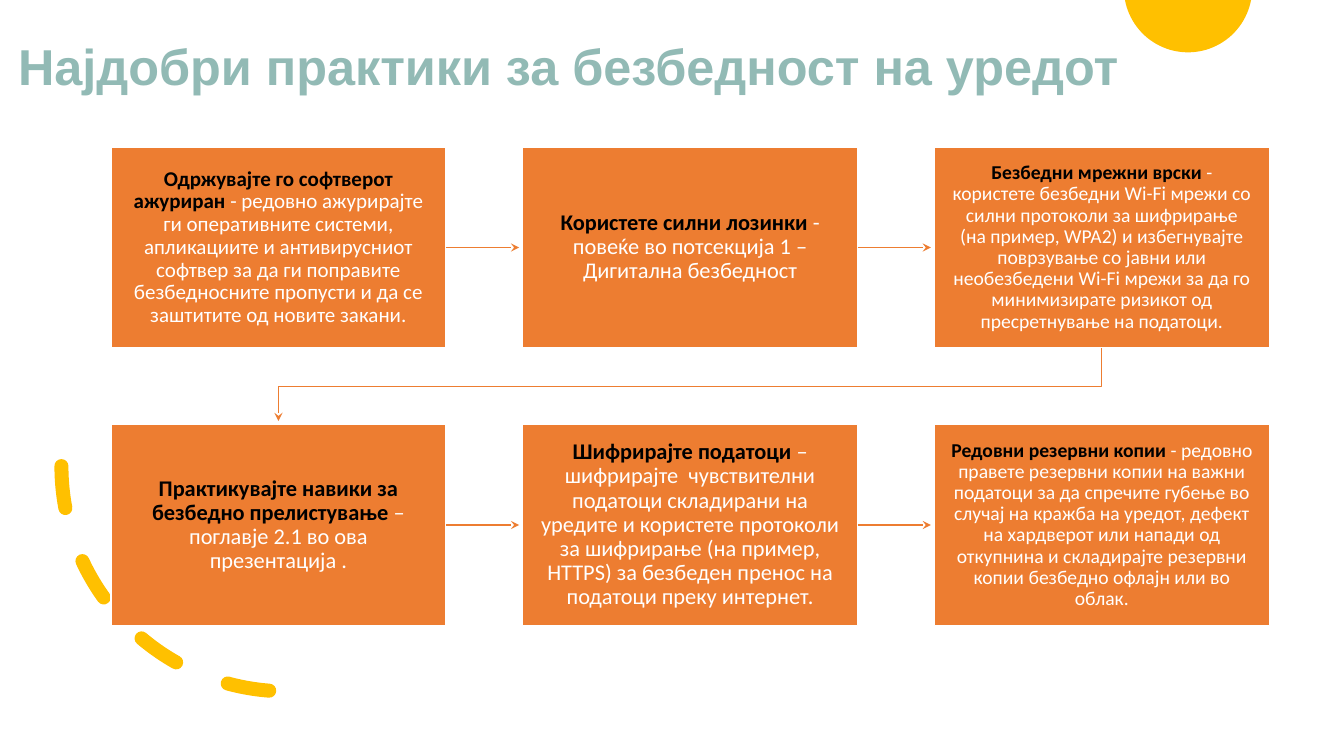
import math
from dataclasses import dataclass

from lxml import etree
from pptx import Presentation
from pptx.dml.color import RGBColor
from pptx.enum.dml import MSO_LINE
from pptx.enum.shapes import MSO_CONNECTOR, MSO_SHAPE
from pptx.enum.text import MSO_ANCHOR, PP_ALIGN
from pptx.oxml.ns import qn
from pptx.util import Pt

RECT, ARC = MSO_SHAPE.RECTANGLE, MSO_SHAPE.ARC
STRAIGHT = MSO_CONNECTOR.STRAIGHT
DASH = MSO_LINE.DASH
MIDDLE = MSO_ANCHOR.MIDDLE
CENTER = PP_ALIGN.CENTER
BOTTOM_SIDE, RIGHT_SIDE = 2, 3


@dataclass(frozen=True)
class Theme:
    title: RGBColor = RGBColor.from_string("92BAB5")
    box: RGBColor = RGBColor.from_string("ED7D31")
    accent: RGBColor = RGBColor.from_string("FFC000")
    strong: RGBColor = RGBColor.from_string("000000")
    light: RGBColor = RGBColor.from_string("FFFFFF")
    title_font: str = "Arial"
    body_font: str = "Calibri"
    title_size: int = 36
    large: int = 16
    medium: int = 15
    small: int = 14


THEME = Theme()

LEFT, TOP = 79.3, 105.1
BOX_W, BOX_H = 239.2, 143.4
PITCH_X, PITCH_Y = 294.1, 198.2
COLUMNS = 3
ARROW_GAP = 2.6

PRACTICES = [
    ("Одржувајте го софтверот ажуриран ",
     "- редовно ажурирајте ги оперативните системи, апликациите и антивирусниот "
     "софтвер за да ги поправите безбедносните пропусти и да се заштитите од "
     "новите закани.", THEME.medium),
    ("Користете силни лозинки ",
     "- повеќе во потсекција 1 – Дигитална безбедност", THEME.large),
    ("Безбедни мрежни врски ",
     "- користете безбедни Wi-Fi мрежи со силни протоколи за шифрирање (на "
     "пример, WPA2) и избегнувајте поврзување со јавни или необезбедени Wi-Fi "
     "мрежи за да го минимизирате ризикот од пресретнување на податоци.",
     THEME.small),
    ("Практикувајте навики за безбедно прелистување ",
     "– поглавје 2.1 во ова презентација .", THEME.large),
    ("Шифрирајте податоци ",
     "– шифрирајте  чувствителни податоци складирани на уредите и користете "
     "протоколи за шифрирање (на пример, HTTPS) за безбеден пренос на податоци "
     "преку интернет.", THEME.large),
    ("Редовни резервни копии ",
     "- редовно правете резервни копии на важни податоци за да спречите губење "
     "во случај на кражба на уредот, дефект на хардверот или напади од "
     "откупнина и складирајте резервни копии безбедно офлајн или во облак.",
     THEME.small),
]


def add_outline(slide, points, close):
    corners = [(Pt(x), Pt(y)) for x, y in points]
    builder = slide.shapes.build_freeform(*corners[0])
    builder.add_line_segments(corners[1:], close=close)
    s = builder.convert_to_shape()
    s.shadow.inherit = False
    return s


def style_arrow(s):
    s.line.color.rgb = THEME.box
    s.line.width = Pt(0.75)
    ln = s._element.spPr.get_or_add_ln()
    etree.SubElement(ln, qn("a:tailEnd"), type="stealth")


def add_title(slide, text):
    s = slide.shapes.add_textbox(Pt(5.8), Pt(18.7), Pt(828.7), Pt(61.2))
    tf = s.text_frame
    tf.word_wrap = True
    tf.vertical_anchor = MIDDLE
    p = tf.paragraphs[0]
    p.text = text
    p.line_spacing = 0.9
    p.font.name = THEME.title_font
    p.font.size = Pt(THEME.title_size)
    p.font.bold = True
    p.font.color.rgb = THEME.title


def add_sun(slide):
    center_x, center_y, radius = 848.6, -8.4, 45.8
    start = math.asin(-center_y / radius)
    steps = 48
    angles = [start + (math.pi - 2 * start) * i / steps for i in range(steps + 1)]
    points = [(center_x + radius * math.cos(a), center_y + radius * math.sin(a))
              for a in angles]
    s = add_outline(slide, points, True)
    s.fill.solid()
    s.fill.fore_color.rgb = THEME.accent
    s.line.fill.background()


def add_dashed_arc(slide):
    s = slide.shapes.add_shape(ARC, Pt(43.9), Pt(172.1), Pt(321.8), Pt(321.8))
    s.shadow.inherit = False
    s.rotation = 270
    s._element.spPr.xfrm.set("flipH", "1")
    s.fill.background()
    s.line.color.rgb = THEME.accent
    s.line.width = Pt(10)
    s.line.dash_style = DASH
    s._element.spPr.get_or_add_ln().set("cap", "rnd")


def add_box(slide, x, y, heading, detail, size):
    s = slide.shapes.add_shape(RECT, Pt(x), Pt(y), Pt(BOX_W), Pt(BOX_H))
    s.shadow.inherit = False
    s.fill.solid()
    s.fill.fore_color.rgb = THEME.box
    s.line.color.rgb = THEME.light
    s.line.width = Pt(1)
    tf = s.text_frame
    tf.word_wrap = True
    tf.vertical_anchor = MIDDLE
    tf.margin_left = tf.margin_right = Pt(11.7)
    tf.margin_top = tf.margin_bottom = Pt(12.3)
    p = tf.paragraphs[0]
    p.alignment = CENTER
    p.line_spacing = 0.9
    p.font.name = THEME.body_font
    p.font.size = Pt(size)
    for text, color, bold in ((heading, THEME.strong, True),
                              (detail, THEME.light, False)):
        r = p.add_run()
        r.text = text
        r.font.bold = bold
        r.font.color.rgb = color
    return s


def add_arrow(slide, box, x, y):
    middle = Pt(y + BOX_H / 2)
    s = slide.shapes.add_connector(STRAIGHT, Pt(x + BOX_W), middle,
                                   Pt(x + PITCH_X - ARROW_GAP), middle)
    s.begin_connect(box, RIGHT_SIDE)
    style_arrow(s)
    etree.SubElement(s._element.spPr, qn("a:effectLst"))


def add_row_turn(slide):
    first = LEFT + BOX_W / 2
    last = first + (COLUMNS - 1) * PITCH_X
    start = TOP + BOX_H
    end = TOP + PITCH_Y
    turn = (start + end) / 2
    s = add_outline(slide, [(last, start), (last, turn), (first, turn),
                            (first, end - ARROW_GAP)], False)
    s.fill.background()
    style_arrow(s)


def main():
    prs = Presentation()
    prs.slide_width, prs.slide_height = Pt(960), Pt(540)
    slide = prs.slides.add_slide(prs.slide_layouts[6])
    add_sun(slide)
    add_title(slide, "Најдобри практики за безбедност на уредот")
    add_dashed_arc(slide)
    for i, practice in enumerate(PRACTICES):
        row, column = divmod(i, COLUMNS)
        x, y = LEFT + column * PITCH_X, TOP + row * PITCH_Y
        box = add_box(slide, x, y, *practice)
        if column < COLUMNS - 1:
            add_arrow(slide, box, x, y)
    add_row_turn(slide)
    prs.save("out.pptx")


if __name__ == "__main__":
    main()
